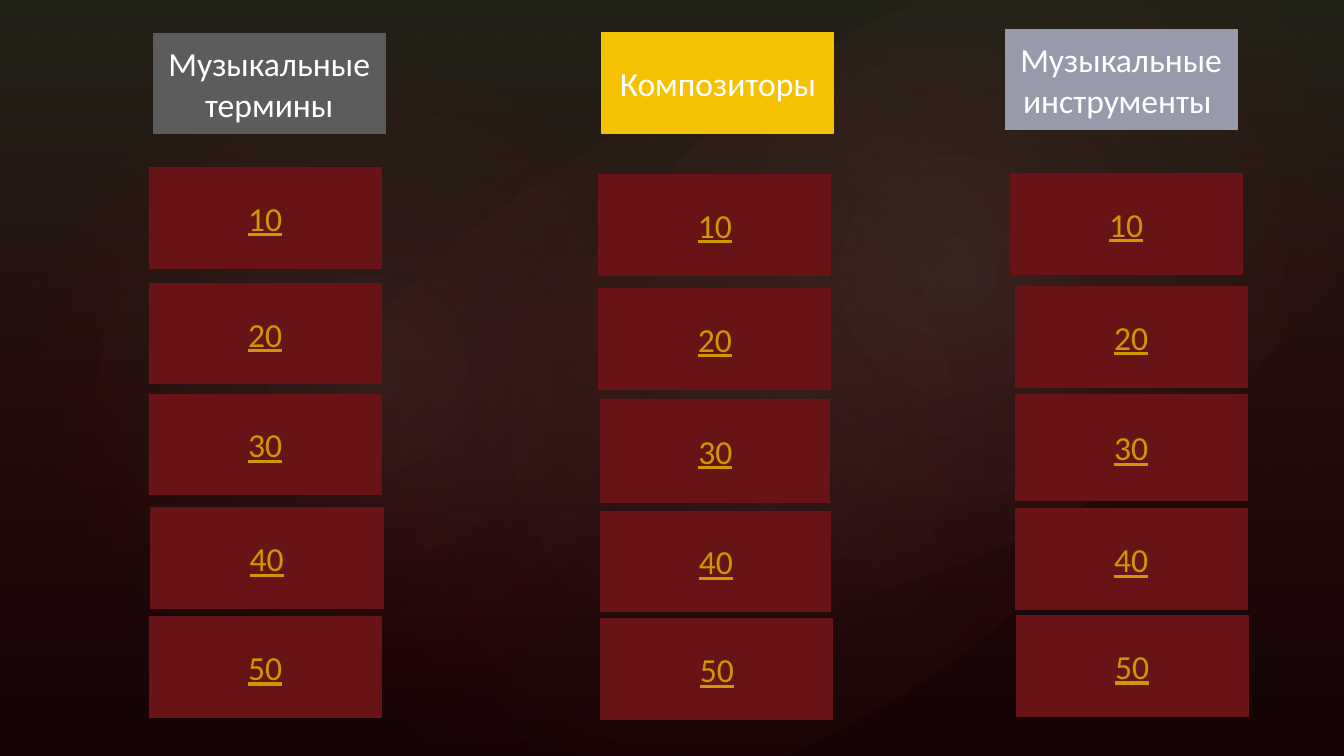
"""Build the music quiz board: three topics, each with five scored questions."""
from typing import NamedTuple

from pptx import Presentation
from pptx.dml.color import RGBColor
from pptx.enum.shapes import MSO_SHAPE
from pptx.enum.text import MSO_ANCHOR, PP_ALIGN
from pptx.oxml import parse_xml
from pptx.oxml.ns import nsdecls, qn
from pptx.util import Inches, Pt

RECTANGLE = MSO_SHAPE.RECTANGLE
OVAL = MSO_SHAPE.OVAL
CENTER = PP_ALIGN.CENTER
MIDDLE = MSO_ANCHOR.MIDDLE

COLORS = {
    "background": "000000",
    "olive": "616042",
    "red": "D1282E",
    "glow": "D2D1BE",
    "card": "681417",
    "score": "CC9900",
    "heading": "FFFFFF",
    "terms": "5C5C5C",
    "composers": "F5C201",
    "instruments": "989AAC",
}
FONT = "Calibri"
CARD_WIDTH, CARD_HEIGHT = 2.3, 1.0
DOWNWARD = '<a:lin ang="5400000" scaled="0"/>'
RADIAL = ('<a:path path="circle">'
          '<a:fillToRect l="50000" t="50000" r="50000" b="50000"/></a:path>')


class Frame(NamedTuple):
    left: float
    top: float
    width: float = CARD_WIDTH
    height: float = CARD_HEIGHT


class Stop(NamedTuple):
    position: int
    color: str
    opacity: int


class Glow(NamedTuple):
    frame: Frame
    rotation: float
    opacity: int


class Topic(NamedTuple):
    title: str
    color: str
    heading: Frame
    cards: list[Frame]


GLOWS = [
    Glow(Frame(2, 1.14, 10.56, 6.24), 328.7, 7),
    Glow(Frame(0.61, 0.46, 6.06, 6.53), 294.3, 8),
    Glow(Frame(4.78, 0.13, 9.45, 5.2), 328.7, 8),
]
TOPICS = [
    Topic("Музыкальные термины", "terms", Frame(1.52, 0.33), [
        Frame(1.48, 1.66), Frame(1.48, 2.81), Frame(1.48, 3.91),
        Frame(1.49, 5.04, 2.31), Frame(1.48, 6.12)]),
    Topic("Композиторы", "composers", Frame(5.97, 0.32), [
        Frame(5.94, 1.73), Frame(5.94, 2.86), Frame(5.96, 3.96, 2.27, 1.03),
        Frame(5.96, 5.07, 2.28), Frame(5.96, 6.14)]),
    Topic("Музыкальные инструменты ", "instruments", Frame(9.97, 0.29), [
        Frame(10.02, 1.72), Frame(10.07, 2.84), Frame(10.07, 3.91, height=1.06),
        Frame(10.07, 5.05), Frame(10.08, 6.11)]),
]


def rgb(name: str) -> RGBColor:
    return RGBColor.from_string(COLORS[name])


def add_box(page, kind: MSO_SHAPE, frame: Frame, color: str):
    box = page.shapes.add_shape(kind, *(Inches(length) for length in frame))
    box.shadow.inherit = False
    box.fill.solid()
    box.fill.fore_color.rgb = rgb(color)
    return box


def add_gradient(page, kind: MSO_SHAPE, frame: Frame, stops: list[Stop],
                 direction: str, rotation: float = 0) -> None:
    box = add_box(page, kind, frame, stops[0].color)
    box.rotation = rotation
    box.line.fill.background()
    stop_list = "".join(
        f'<a:gs pos="{stop.position * 1000}"><a:srgbClr val="{COLORS[stop.color]}">'
        f'<a:alpha val="{stop.opacity * 1000}"/></a:srgbClr></a:gs>'
        for stop in stops)
    gradient = parse_xml(f'<a:gradFill {nsdecls("a")} rotWithShape="1">'
                         f'<a:gsLst>{stop_list}</a:gsLst>{direction}</a:gradFill>')
    properties = box._element.spPr
    properties.replace(properties.find(qn("a:solidFill")), gradient)


def add_card(page, frame: Frame, text: str, color: str, text_color: str,
             underline: bool = False) -> None:
    box = add_box(page, RECTANGLE, frame, color)
    box.line.color.rgb = rgb(color)
    box.line.width = Pt(0.75)
    box.text_frame.word_wrap = True
    box.text_frame.vertical_anchor = MIDDLE
    para = box.text_frame.paragraphs[0]
    para.alignment = CENTER
    para.space_before = Pt(10)
    span = para.add_run()
    span.text = text
    span.font.name = FONT
    span.font.size = Pt(24)
    span.font.color.rgb = rgb(text_color)
    span.font.underline = underline


def main() -> None:
    deck = Presentation()
    deck.slide_width, deck.slide_height = Inches(13.33), Inches(7.5)
    page = deck.slides.add_slide(deck.slide_layouts[6])
    page.background.fill.solid()
    page.background.fill.fore_color.rgb = rgb("background")
    add_gradient(page, RECTANGLE, Frame(0, 0, 13.33, 7.5),
                 [Stop(0, "olive", 36), Stop(100, "red", 10)], DOWNWARD)
    for glow in GLOWS:
        add_gradient(page, OVAL, glow.frame,
                     [Stop(0, "glow", glow.opacity), Stop(58, "red", 0)],
                     RADIAL, glow.rotation)
    for topic in TOPICS:
        add_card(page, topic.heading, topic.title, topic.color, "heading")
        for number, frame in enumerate(topic.cards, start=1):
            add_card(page, frame, str(number * 10), "card", "score", underline=True)
    deck.save("out.pptx")


if __name__ == "__main__":
    main()
